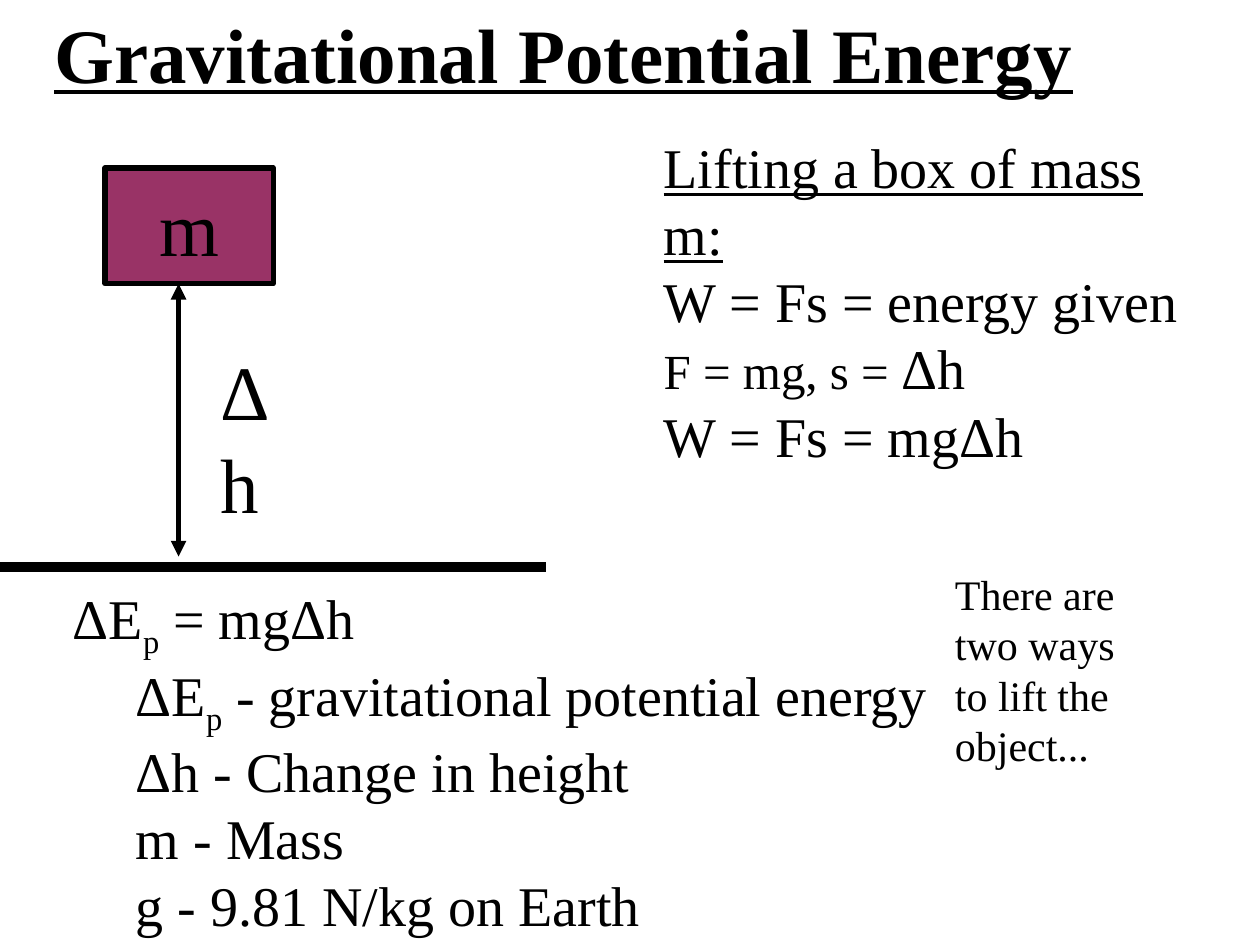
from lxml.etree import SubElement
from pptx import Presentation
from pptx.dml.color import RGBColor
from pptx.enum.shapes import MSO_CONNECTOR, MSO_SHAPE
from pptx.enum.text import MSO_ANCHOR, MSO_AUTO_SIZE, PP_ALIGN
from pptx.oxml.ns import qn
from pptx.util import Cm, Pt

FONT, BLACK, PLUM = "Times New Roman", "000000", "993366"
UNDER, SUB = {"underline": True}, {"sub": True}

TITLE = [(0, [("Gravitational Potential Energy", 44, {"bold": True, "underline": True})])]
MASS = [(0, [("m", 44, {})])]

LIFTING = [
    (0, [("Lifting a box of mass m:", 32, UNDER)]),
    (0, [("W = Fs = energy given", 32, {})]),
    (0, [("F = mg, s = ", 28, {}), ("Δh", 32, {})]),
    (0, [("W = Fs = mgΔh", 32, {})]),
]
HEIGHT = [(0, [("Δh", 44, {})])]
FORMULA = [
    (0, [("ΔE", 32, {}), ("p", 32, SUB), (" = mgΔh", 32, {})]),
    (1, [("ΔE", 32, {}), ("p", 32, SUB), (" - gravitational potential energy", 32, {})]),
] + [(1, [(text, 32, {})]) for text in ("Δh - Change in height", "m - Mass", "g - 9.81 N/kg on Earth")]
WAYS = [(0, [(text, 24, {})]) for text in ("There are", "two ways", "to lift the", "object...")]

TITLE_AT = (0.84, 0, 23.06, 2.12)
TEXT_BOXES = [
    (LIFTING, (13.13, 2.54, 11.64, 5.66)),
    (HEIGHT, (4.19, 6.81, 2.22, 2.12)),
    (FORMULA, (1.22, 11.64, 18, 7.04)),
    (WAYS, (19, 11.33, 3.94, 4.32)),
]
MASS_AT = (2.12, 3.39, 3.39, 2.33)
GROUND = (0, 11.43, 11, 11.43)
LIFT = (3.6, 5.72, 3.6, 11.22)


def rgb(color):
    """Turn a hex string into a colour."""
    return RGBColor.from_string(color)


def write(tf, paragraphs, align=PP_ALIGN.LEFT, anchor=MSO_ANCHOR.TOP):
    """Fill a text frame run by run."""
    tf.word_wrap = True
    tf.auto_size = MSO_AUTO_SIZE.NONE
    tf.vertical_anchor = anchor
    for i, (level, runs) in enumerate(paragraphs):
        p = tf.paragraphs[0] if i == 0 else tf.add_paragraph()
        p.alignment, p.level = align, level
        if level:
            pPr = p._p.get_or_add_pPr()
            pPr.set("marL", str(Cm(1.27 * level)))
            pPr.set("indent", "0")
        for text, size, style in runs:
            r = p.add_run()
            r.text = text
            r.font.name, r.font.size = FONT, Pt(size)
            r.font.color.rgb = rgb(BLACK)
            r.font.bold = style.get("bold", False)
            r.font.underline = style.get("underline", False)
            if style.get("sub"):
                r._r.get_or_add_rPr().set("baseline", "-25000")


def add_line(s, ends, width, arrows=False):
    """Draw a straight black line, with arrowheads at both ends if asked."""
    line = s.shapes.add_connector(MSO_CONNECTOR.STRAIGHT, *map(Cm, ends))
    line.line.color.rgb = rgb(BLACK)
    line.line.width = Pt(width)
    if arrows:
        for end in ("a:headEnd", "a:tailEnd"):
            SubElement(line.line._get_or_add_ln(), qn(end), type="triangle")
    SubElement(line._element.spPr, qn("a:effectLst"))


def main():
    """Build the slide and save it."""
    prs = Presentation()
    prs.slide_width, prs.slide_height = Cm(25.4), Cm(19.05)
    s = prs.slides.add_slide(prs.slide_layouts[5])

    title = s.shapes.title
    title.left, title.top, title.width, title.height = map(Cm, TITLE_AT)
    write(title.text_frame, TITLE)

    add_line(s, GROUND, 6)
    mass = s.shapes.add_shape(MSO_SHAPE.RECTANGLE, *map(Cm, MASS_AT))
    mass.shadow.inherit = False
    mass.fill.solid()
    mass.fill.fore_color.rgb = rgb(PLUM)
    mass.line.color.rgb = rgb(BLACK)
    mass.line.width = Pt(3)
    write(mass.text_frame, MASS, PP_ALIGN.CENTER, MSO_ANCHOR.MIDDLE)
    add_line(s, LIFT, 3, arrows=True)

    for paragraphs, place in TEXT_BOXES:
        write(s.shapes.add_textbox(*map(Cm, place)).text_frame, paragraphs)

    prs.save("out.pptx")


if __name__ == "__main__":
    main()
